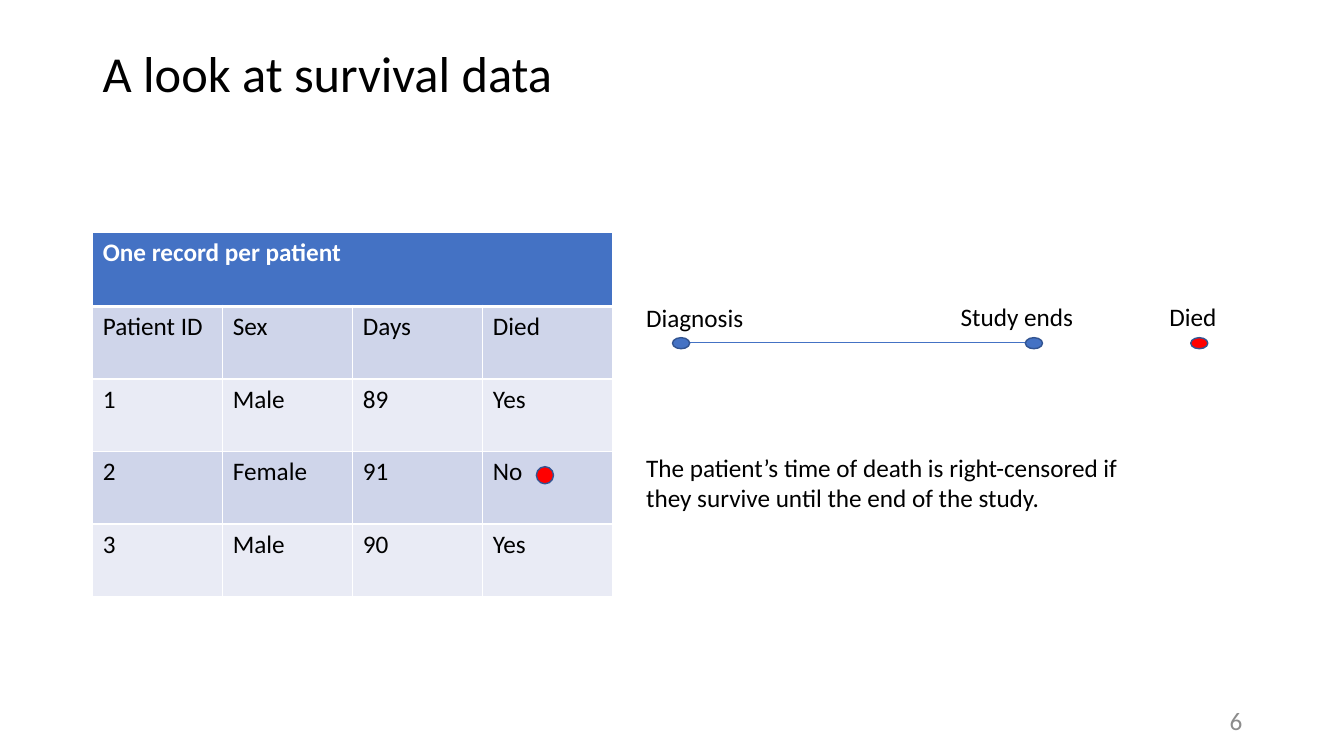
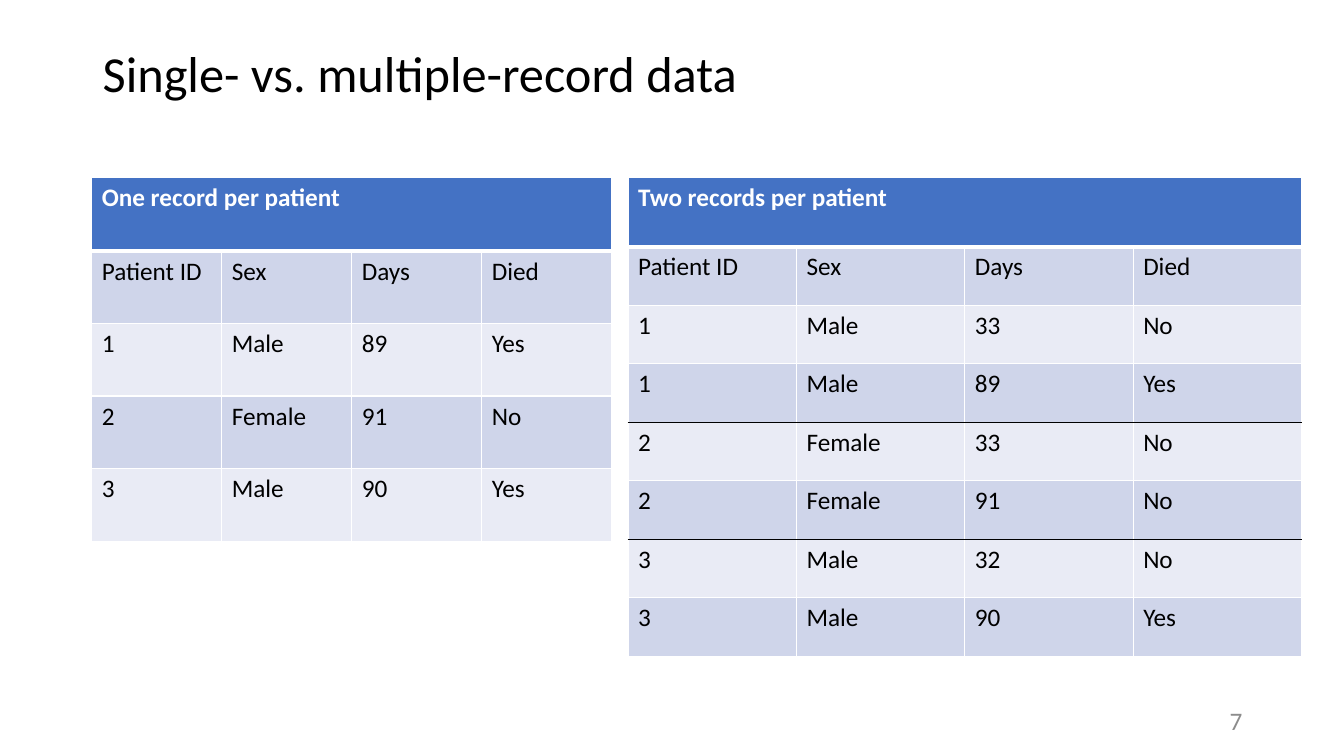
from dataclasses import dataclass

from lxml import etree
from pptx import Presentation
from pptx import util as u
from pptx.dml.color import RGBColor
from pptx.enum import shapes, text
from pptx.oxml import ns

PX = 9144  # EMU per pixel, 100 px to the inch


@dataclass(frozen=True)
class Theme:
    font: str = "Calibri"
    title_size: int = 36
    body_size: int = 18
    ink: str = "000000"
    white: str = "FFFFFF"
    muted: str = "8C8C8C"
    blue: str = "4472C4"
    outline: str = "325491"
    red: str = "FF0000"
    bands: tuple[str, str] = ("CFD5EA", "E9EBF5")


@dataclass(frozen=True)
class Box:
    left: int
    top: int
    width: int
    height: int

    def emu(self) -> tuple[int, int, int, int]:
        return tuple(value * PX for value in (self.left, self.top, self.width, self.height))


@dataclass(frozen=True)
class RecordTable:
    title: str
    records: tuple[tuple[str, ...], ...]
    left: int
    top: int
    column_width: int
    header_height: int
    row_height: int
    ruled_rows: tuple[int, ...] = ()  # rows closed by a dark rule


@dataclass(frozen=True)
class Marker:
    box: Box
    color: str


@dataclass(frozen=True)
class Label:
    box: Box
    words: str


THEME = Theme()
TITLE_BOX = Box(92, 40, 1160, 71)
NUMBER_BOX = Box(942, 695, 300, 40)
COLUMN_NAMES = ("Patient ID", "Sex", "Days", "Died")
SINGLE_RECORDS = (
    ("1", "Male", "89", "Yes"),
    ("2", "Female", "91", "No"),
    ("3", "Male", "90", "Yes"),
)
DOUBLE_RECORDS = (
    ("1", "Male", "33", "No"),
    ("1", "Male", "89", "Yes"),
    ("2", "Female", "33", "No"),
    ("2", "Female", "91", "No"),
    ("3", "Male", "32", "No"),
    ("3", "Male", "90", "Yes"),
)
TIMELINE_Y = 340
TIMELINE_ENDS = (679, 1025)
DOT_TOP = 335
MARKERS = (
    Marker(Box(1181, DOT_TOP, 17, 11), THEME.red),
    Marker(Box(667, DOT_TOP, 17, 11), THEME.blue),
    Marker(Box(1017, DOT_TOP, 17, 11), THEME.blue),
    Marker(Box(532, 463, 17, 17), THEME.red),
)
LABELS = (
    Label(Box(631, 295, 127, 40), "Diagnosis"),
    Label(Box(943, 294, 182, 40), "Study ends"),
    Label(Box(1150, 294, 127, 40), "Died"),
    Label(
        Box(631, 444, 519, 71),
        "The patient’s time of death is right-censored if they survive until the end of the study.",
    ),
)


def rgb(color: str) -> RGBColor:
    return RGBColor.from_string(color)


def write(frame, words: str, *, size: int = THEME.body_size, color: str = THEME.ink,
          bold: bool = False, align=text.PP_ALIGN.LEFT, spacing: float = 1.0) -> None:
    """Put one formatted paragraph in a text frame."""
    paragraph = frame.paragraphs[0]
    paragraph.alignment = align
    paragraph.line_spacing = spacing
    run = paragraph.add_run()
    run.text = words
    run.font.name = THEME.font
    run.font.size = u.Pt(size)
    run.font.bold = bold
    run.font.color.rgb = rgb(color)


def add_text(slide, box: Box, words: str, *, anchor=text.MSO_ANCHOR.TOP, **style) -> None:
    frame = slide.shapes.add_textbox(*box.emu()).text_frame
    frame.word_wrap = True
    frame.vertical_anchor = anchor
    write(frame, words, **style)


def add_marker(slide, marker: Marker) -> None:
    shape = slide.shapes.add_shape(shapes.MSO_SHAPE.OVAL, *marker.box.emu())
    shape.shadow.inherit = False
    shape.fill.solid()
    shape.fill.fore_color.rgb = rgb(marker.color)
    shape.line.color.rgb = rgb(THEME.outline)
    shape.line.width = u.Pt(1)


def add_timeline(slide) -> None:
    start, end = TIMELINE_ENDS
    line = slide.shapes.add_connector(
        shapes.MSO_CONNECTOR.STRAIGHT, start * PX, TIMELINE_Y * PX, end * PX, TIMELINE_Y * PX)
    line.line.color.rgb = rgb(THEME.blue)
    line.line.width = u.Pt(0.5)
    etree.SubElement(line._element.spPr, ns.qn("a:effectLst"))


def set_border(cell, side: str, color: str, points: int) -> None:
    properties = cell._tc.get_or_add_tcPr()
    line = etree.SubElement(properties, ns.qn(f"a:ln{side}"), w=str(u.Pt(points)))
    fill = etree.SubElement(line, ns.qn("a:solidFill"))
    etree.SubElement(fill, ns.qn("a:srgbClr"), val=color)


def style_cell(cell, row: int, ruled_rows: tuple[int, ...]) -> None:
    """Draw the borders first, then the fill, as the schema orders them."""
    def edge(upper_row: int) -> tuple[str, int]:
        color = THEME.ink if upper_row in ruled_rows else THEME.white
        return color, 3 if upper_row == 0 else 1

    for side in "LR":
        set_border(cell, side, THEME.white, 1)
    set_border(cell, "T", *edge(row - 1))
    set_border(cell, "B", *edge(row))
    cell.fill.solid()
    cell.fill.fore_color.rgb = rgb(THEME.bands[(row - 1) % 2] if row else THEME.blue)


def add_records(slide, data: RecordTable) -> None:
    rows = ((data.title,), COLUMN_NAMES, *data.records)
    columns = len(COLUMN_NAMES)
    box = Box(data.left, data.top, columns * data.column_width,
              data.header_height + (len(rows) - 1) * data.row_height)
    table = slide.shapes.add_table(len(rows), columns, *box.emu()).table
    table.first_row = table.horz_banding = False
    for column in table.columns:
        column.width = data.column_width * PX
    for index, values in enumerate(rows):
        table.rows[index].height = (data.row_height if index else data.header_height) * PX
        for column in range(columns):
            style_cell(table.cell(index, column), index, data.ruled_rows)
        for column, words in enumerate(values):
            write(table.cell(index, column).text_frame, words, bold=index == 0,
                  color=THEME.ink if index else THEME.white)
    table.cell(0, 0).merge(table.cell(0, columns - 1))


def add_slide(presentation, title: str, number: int):
    """Start a blank slide with the shared title and page number."""
    slide = presentation.slides.add_slide(presentation.slide_layouts[6])
    add_text(slide, TITLE_BOX, title, size=THEME.title_size, spacing=0.9,
             anchor=text.MSO_ANCHOR.MIDDLE)
    add_text(slide, NUMBER_BOX, str(number), color=THEME.muted,
             align=text.PP_ALIGN.RIGHT, anchor=text.MSO_ANCHOR.MIDDLE)
    return slide


def single_table(left: int, top: int) -> RecordTable:
    return RecordTable("One record per patient", SINGLE_RECORDS, left, top, 129, 73, 72)


def main() -> None:
    presentation = Presentation()
    presentation.slide_width = 1333 * PX
    presentation.slide_height = 750 * PX

    # Survival data with the censoring timeline
    slide = add_slide(presentation, "A look at survival data", 6)
    add_records(slide, single_table(92, 231))
    add_timeline(slide)
    for label in LABELS:
        add_text(slide, label.box, label.words)
    for marker in MARKERS:
        add_marker(slide, marker)

    # Both record layouts side by side
    slide = add_slide(presentation, "Single- vs. multiple-record data", 7)
    add_records(slide, single_table(91, 176))
    add_records(slide, RecordTable("Two records per patient", DOUBLE_RECORDS,
                                   623, 176, 167, 69, 58, ruled_rows=(3, 5)))

    presentation.save("out.pptx")


if __name__ == "__main__":
    main()
